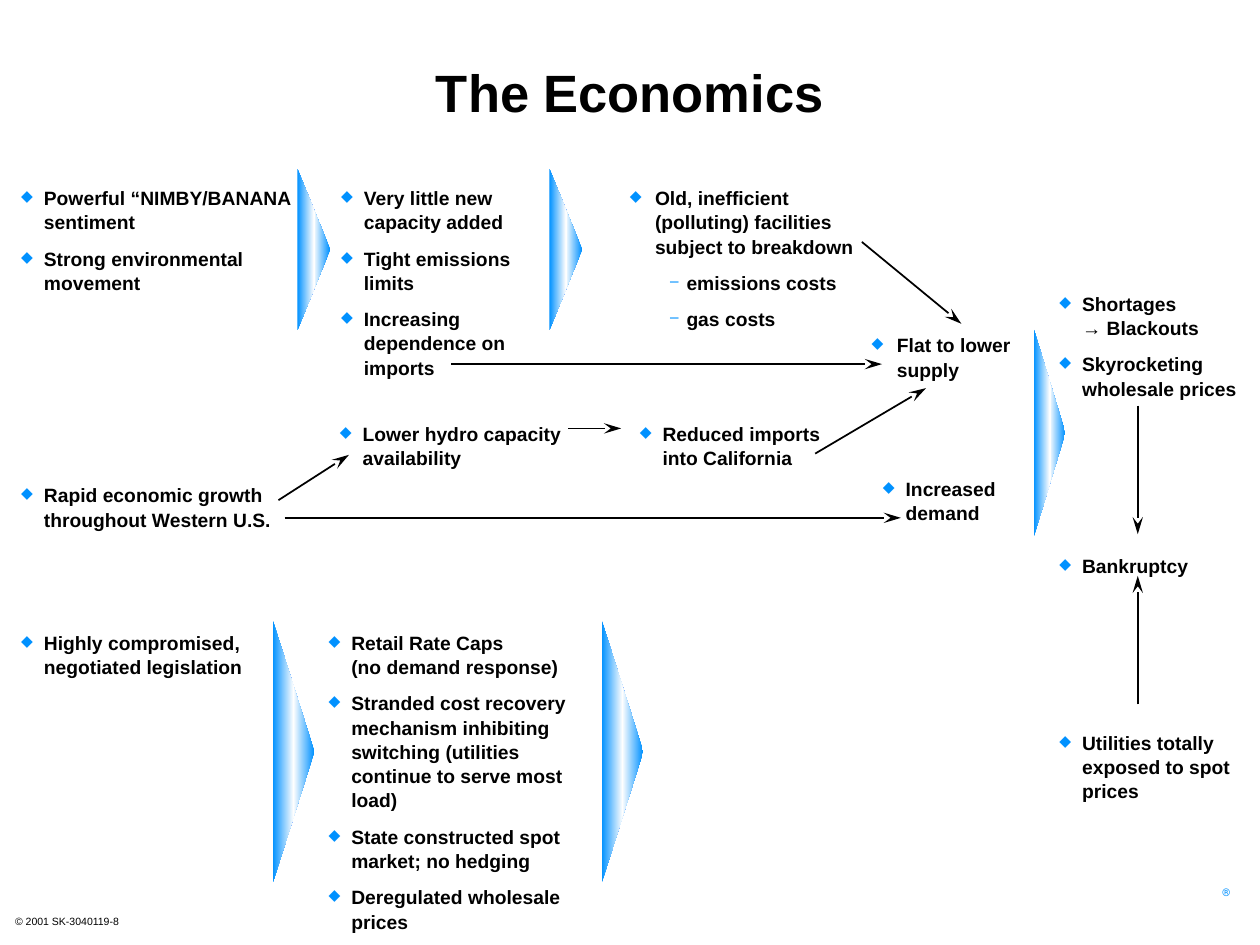
"""Build the slide "The Economics": lists of causes joined by arrows and wedges."""
from dataclasses import dataclass
from typing import Any

from lxml.etree import SubElement
from pptx import Presentation
from pptx.dml.color import RGBColor
from pptx.enum.shapes import MSO_CONNECTOR, MSO_SHAPE
from pptx.enum.text import MSO_ANCHOR, PP_ALIGN
from pptx.oxml import parse_xml
from pptx.oxml.ns import nsdecls, qn
from pptx.util import Inches, Pt

BLUE, BLACK, PALE = "0091FF", "000000", "FEFEFE"


@dataclass(frozen=True)
class Item:
    text: str
    level: int = 0
    space_before: float = 6.9


@dataclass(frozen=True)
class BulletList:
    left: float
    top: float
    width: float
    height: float
    items: tuple[Item, ...]
    indent: float = 0.18


@dataclass(frozen=True)
class Arrow:
    start: tuple[float, float]
    end: tuple[float, float]


@dataclass(frozen=True)
class Wedge:
    left: float
    top: float
    width: float
    height: float


LISTS = (
    BulletList(0.07, 1.42, 2.39, 0.93, (
        Item("Powerful “NIMBY/BANANA sentiment"),
        Item("Strong environmental movement"))),
    BulletList(2.61, 1.42, 1.97, 1.58, (
        Item("Very little new capacity added"),
        Item("Tight emissions limits"),
        Item("Increasing dependence on imports"))),
    BulletList(4.9, 1.42, 2.08, 1.21, (
        Item("Old, inefficient (polluting) facilities subject to breakdown"),
        Item("emissions costs", level=1),
        Item("gas costs", level=1)), indent=0.2),
    BulletList(6.82, 2.59, 1.35, 0.47, (Item("Flat to lower supply"),), indent=0.2),
    BulletList(0.07, 3.78, 2.31, 0.47, (
        Item("Rapid economic growth throughout Western U.S."),)),
    BulletList(2.6, 3.29, 2.06, 0.47, (Item("Lower hydro capacity availability"),)),
    BulletList(4.98, 3.29, 1.68, 0.47, (Item("Reduced imports into California"),)),
    BulletList(6.91, 3.73, 1.26, 0.47, (Item("Increased demand"),)),
    BulletList(8.31, 2.26, 1.67, 4.09, (
        Item("Shortages\v→ Blackouts"),
        Item("Skyrocketing wholesale prices"),
        Item("Bankruptcy", space_before=87.3),
        Item("Utilities totally exposed to spot prices", space_before=87.3))),
    BulletList(0.07, 4.95, 2.07, 0.47, (
        Item("Highly compromised, negotiated legislation"),)),
    BulletList(2.51, 4.95, 2.16, 2.41, (
        Item("Retail Rate Caps\v(no demand response)"),
        Item("Stranded cost recovery mechanism inhibiting switching "
             "(utilities continue to serve most load)"),
        Item("State constructed spot market; no hedging"),
        Item("Deregulated wholesale prices"))),
)
ARROWS = (
    Arrow((3.58, 2.89), (7, 2.89)),
    Arrow((6.84, 1.92), (7.63, 2.57)),
    Arrow((6.47, 3.6), (7.35, 3.08)),
    Arrow((2.21, 3.97), (2.77, 3.61)),
    Arrow((4.51, 3.4), (4.93, 3.4)),
    Arrow((9.03, 5.59), (9.03, 4.57)),
    Arrow((9.03, 3.22), (9.03, 4.24)),
    Arrow((2.26, 4.11), (7.15, 4.11)),
)
WEDGES = (
    Wedge(1.85, 1.85, 1.28, 0.26),
    Wedge(3.85, 1.85, 1.28, 0.26),
    Wedge(7.51, 3.31, 1.64, 0.25),
    Wedge(1.29, 5.8, 2.08, 0.33),
    Wedge(3.9, 5.8, 2.08, 0.33),
)


def color(value: str) -> RGBColor:
    return RGBColor.from_string(value)


def set_font(paragraph: Any, size: float, shade: str = BLACK,
             bold: bool = False, name: str = "Arial") -> None:
    font = paragraph.font
    font.name, font.size, font.bold = name, Pt(size), bold
    font.color.rgb = color(shade)


def add_bullet(paragraph: Any, character: str, margin: float, hanging: float) -> None:
    properties = paragraph._p.get_or_add_pPr()
    properties.set("marL", str(Inches(margin)))
    properties.set("indent", str(-Inches(hanging)))
    bullet_color = SubElement(properties, qn("a:buClr"))
    SubElement(bullet_color, qn("a:srgbClr"), val=BLUE)
    SubElement(properties, qn("a:buSzPct"), val="80000")
    SubElement(properties, qn("a:buChar"), char=character)


def draw_list(page: Any, block: BulletList) -> None:
    box = page.shapes.add_textbox(Inches(block.left), Inches(block.top),
                                  Inches(block.width), Inches(block.height))
    frame = box.text_frame
    frame.word_wrap = True
    for index, item in enumerate(block.items):
        para = frame.add_paragraph() if index else frame.paragraphs[0]
        lead, sign, rest = item.text.partition("→")
        para.text = lead
        if sign:
            span = para.add_run()
            span.text, span.font.bold = sign, False
            para.add_run().text = rest
        para.level = item.level
        if item.level:
            add_bullet(para, "–", 0.45, 0.13)
        else:
            add_bullet(para, "◆", block.indent, block.indent)
        para.line_spacing = 1.05
        para.space_before = Pt(item.space_before)
        set_font(para, 11, bold=True)


def draw_arrow(page: Any, arrow: Arrow) -> None:
    points = [Inches(value) for value in (*arrow.start, *arrow.end)]
    connector = page.shapes.add_connector(MSO_CONNECTOR.STRAIGHT, *points)
    connector.line.width = Pt(1)
    connector.line.color.rgb = color(BLACK)
    SubElement(connector.line._get_or_add_ln(), qn("a:tailEnd"),
               type="stealth", w="med", len="lg")
    SubElement(connector._element.spPr, qn("a:effectLst"))


def draw_wedge(page: Any, wedge: Wedge) -> None:
    shape = page.shapes.add_shape(
        MSO_SHAPE.ISOSCELES_TRIANGLE, Inches(wedge.left), Inches(wedge.top),
        Inches(wedge.width), Inches(wedge.height))
    shape.rotation = 90
    shape.shadow.inherit = False
    shape.line.fill.background()
    gradient = parse_xml(
        f'<a:gradFill {nsdecls("a")} rotWithShape="1"><a:gsLst>'
        f'<a:gs pos="0"><a:srgbClr val="{PALE}"/></a:gs>'
        f'<a:gs pos="100000"><a:srgbClr val="{BLUE}"/></a:gs></a:gsLst>'
        '<a:path path="rect"><a:fillToRect l="50000" t="50000" r="50000" b="50000"/>'
        '</a:path></a:gradFill>')
    shape._element.spPr.find(qn("a:prstGeom")).addnext(gradient)


def draw_mark(page: Any, text: str, left: float, top: float, width: float,
              shade: str, name: str, anchor: MSO_ANCHOR) -> None:
    box = page.shapes.add_textbox(Inches(left), Inches(top), Inches(width), Inches(0.1))
    frame = box.text_frame
    frame.margin_left = frame.margin_right = frame.margin_top = frame.margin_bottom = 0
    frame.word_wrap = False
    frame.vertical_anchor = anchor
    para = frame.paragraphs[0]
    para.text = text
    set_font(para, 6, shade, name=name)


def draw_title(page: Any, text: str) -> None:
    title = page.shapes.title
    title.left, title.top = Inches(0.75), Inches(0.43)
    title.width, title.height = Inches(8.5), Inches(0.6)
    title.text_frame.vertical_anchor = MSO_ANCHOR.MIDDLE
    para = title.text_frame.paragraphs[0]
    para.text = text
    para.alignment = PP_ALIGN.CENTER
    set_font(para, 30, bold=True)


def main() -> None:
    deck = Presentation()
    deck.slide_width, deck.slide_height = Inches(10), Inches(7.5)
    page = deck.slides.add_slide(deck.slide_layouts[5])
    draw_title(page, "The Economics")
    draw_mark(page, "© 2001 SK-3040119-8", 0.12, 7.26, 1.16, BLACK, "Arial", MSO_ANCHOR.TOP)
    draw_mark(page, "®", 9.7, 7.03, 0.06, BLUE, "Roboto", MSO_ANCHOR.MIDDLE)
    for wedge in WEDGES:
        draw_wedge(page, wedge)
    for block in LISTS:
        draw_list(page, block)
    for arrow in ARROWS:
        draw_arrow(page, arrow)
    deck.save("out.pptx")


if __name__ == "__main__":
    main()
